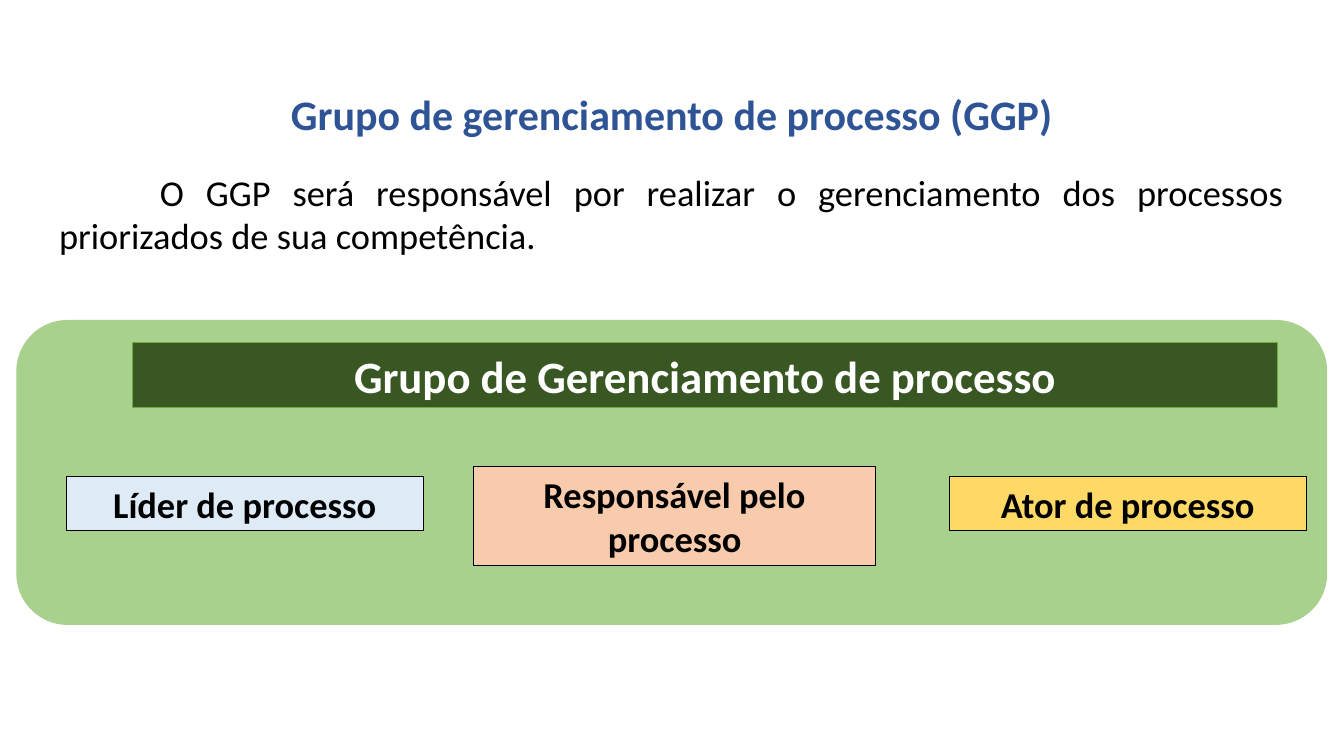
from pptx import Presentation
from pptx.dml.color import RGBColor
from pptx.enum.shapes import MSO_SHAPE
from pptx.enum.text import MSO_ANCHOR, PP_ALIGN
from pptx.util import Cm, Pt

COLORS = {
    "title": "2F5496",
    "black": "000000",
    "white": "FFFFFF",
    "panel": "A9D18E",
    "header": "385723",
    "header_line": "70AD47",
    "leader": "DEEBF7",
    "owner": "F8CBAD",
    "actor": "FFD966",
}


def rgb(name):
    return RGBColor.from_string(COLORS[name])


def write(p, text, size, color, bold=True, align=PP_ALIGN.CENTER):
    p.text = text
    p.alignment = align
    for r in p.runs:
        r.font.name = "Calibri"
        r.font.size = Pt(size)
        r.font.bold = bold
        r.font.color.rgb = rgb(color)


def add_block(s, kind, box, fill, line, line_width=0.75):
    sp = s.shapes.add_shape(kind, *[Cm(v) for v in box])
    sp.shadow.inherit = False
    sp.fill.solid()
    sp.fill.fore_color.rgb = rgb(fill)
    sp.line.color.rgb = rgb(line)
    sp.line.width = Pt(line_width)
    return sp


def add_label(s, box, text, size, fill, line="black", color="black"):
    sp = add_block(s, MSO_SHAPE.RECTANGLE, box, fill, line)
    tf = sp.text_frame
    tf.word_wrap = True
    tf.vertical_anchor = MSO_ANCHOR.MIDDLE
    write(tf.paragraphs[0], text, size, color)


def add_intro(s, box):
    tf = s.shapes.add_textbox(*[Cm(v) for v in box]).text_frame
    tf.word_wrap = True
    write(tf.paragraphs[0], "Grupo de gerenciamento de processo (GGP)", 30, "title")
    p = tf.add_paragraph()
    write(p, "O GGP será responsável por realizar o gerenciamento dos processos "
          "priorizados de sua competência.", 26, "black", False, PP_ALIGN.JUSTIFY)
    p.space_before = Pt(22)
    p._p.get_or_add_pPr().set("indent", str(Cm(2.54)))


def add_group(s, box):
    left, top, width, height = box
    add_block(s, MSO_SHAPE.ROUNDED_RECTANGLE, box, "panel", "panel", 1)
    roles = [
        ("Líder de processo", "leader", 1.25, 3.93, 8.99, 1.37),
        ("Responsável pelo processo", "owner", 11.51, 3.67, 10.13, 2.49),
        ("Ator de processo", "actor", 23.5, 3.93, 8.99, 1.37),
    ]
    for text, fill, x, y, w, h in roles:
        add_label(s, (left + x, top + y, w, h), text, 26, fill)
    add_label(s, (left + 2.92, top + 0.56, width - 4.15, 1.63),
              "Grupo de Gerenciamento de processo", 32,
              "header", "header_line", "white")


def main():
    prs = Presentation()
    prs.slide_width, prs.slide_height = Cm(33.87), Cm(19.05)
    s = prs.slides.add_slide(prs.slide_layouts[6])
    add_group(s, (0.43, 8.08, 33, 7.65))
    add_intro(s, (1.24, 2.11, 31.39, 4.52))
    prs.save("out.pptx")


if __name__ == "__main__":
    main()
